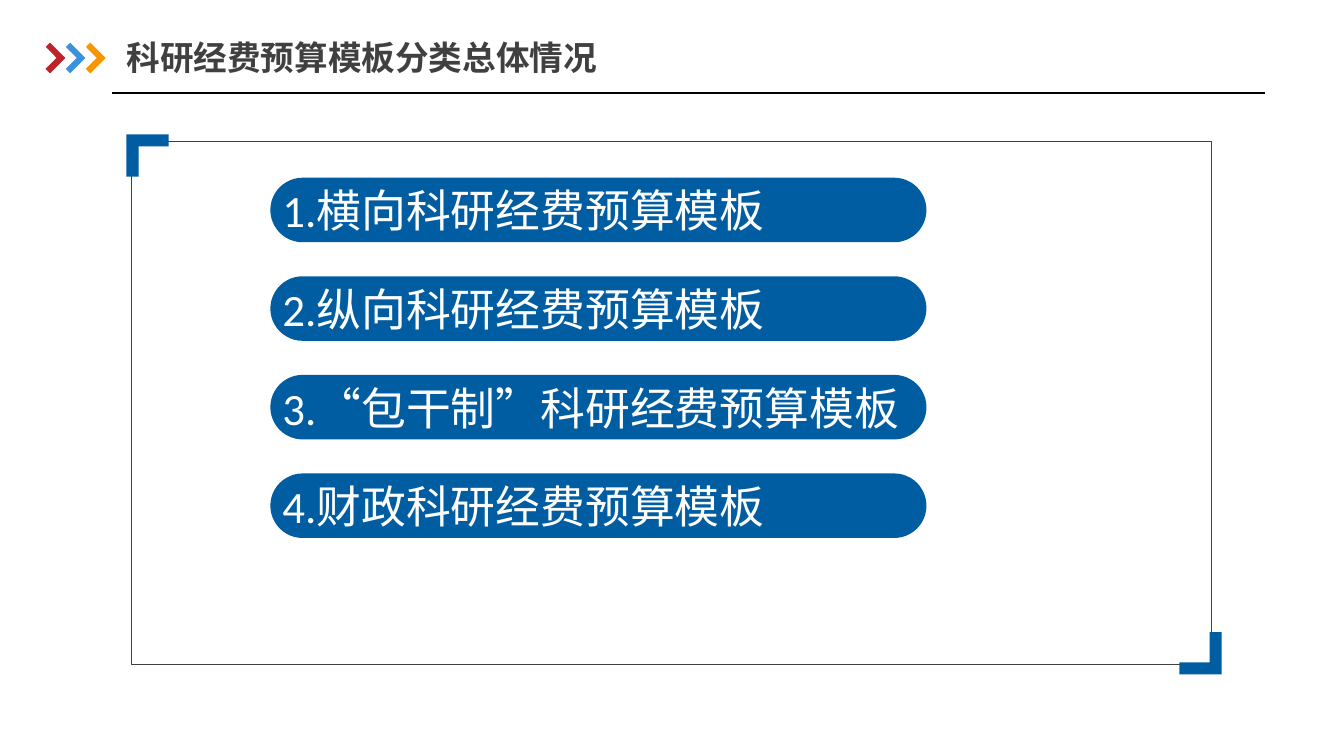
from lxml.etree import SubElement
from pptx import Presentation
from pptx.dml.color import RGBColor
from pptx.enum.shapes import MSO_CONNECTOR, MSO_SHAPE as SHAPE
from pptx.enum.text import MSO_ANCHOR as ANCHOR, PP_ALIGN as ALIGN
from pptx.oxml.ns import qn
from pptx.util import Cm, Pt

COLORS = {
    "blue": "005DA2", "sky": "3992DB", "orange": "F79600", "red": "BC242A",
    "gray": "404040", "black": "000000", "white": "FDFDFD",
}
CJK_FONT = "Noto Sans CJK SC"
ITEMS = [
    "1.横向科研经费预算模板",
    "2.纵向科研经费预算模板",
    "3.“包干制”科研经费预算模板",
    "4.财政科研经费预算模板",
]


def rgb(name):
    return RGBColor.from_string(COLORS[name])


def style(sp, fill=None, line=None, width=0.25):
    sp.shadow.inherit = False
    if fill:
        sp.fill.solid()
        sp.fill.fore_color.rgb = rgb(fill)
    else:
        sp.fill.background()
    if line:
        sp.line.color.rgb = rgb(line)
        sp.line.width = Pt(width)
    else:
        sp.line.fill.background()


def set_text(sp, text, *, size, color, font=CJK_FONT, bold=False,
             inset=(0, 0)):
    tf = sp.text_frame
    tf.word_wrap = True
    tf.vertical_anchor = ANCHOR.MIDDLE
    tf.margin_left = tf.margin_right = Cm(inset[0])
    tf.margin_top = tf.margin_bottom = Cm(inset[1])
    p = tf.paragraphs[0]
    p.alignment = ALIGN.LEFT
    r = p.add_run()
    r.text = text
    r.font.size, r.font.bold, r.font.name = Pt(size), bold, font
    r.font.color.rgb = rgb(color)
    # Chinese characters use their own typeface
    rPr = r.font._element
    rPr.set("lang", "zh-CN")
    ea = rPr.makeelement(qn("a:ea"), {"typeface": CJK_FONT})
    rPr.find(qn("a:latin")).addnext(ea)


def add_header(s, x, y, w, h):
    # Three chevrons, made from turned corner shapes
    for i, color in enumerate(("red", "sky", "orange")):
        sp = s.shapes.add_shape(SHAPE.CORNER, Cm(x + 0.38 * i), Cm(y + 0.33),
                                Cm(0.41), Cm(0.41))
        sp.adjustments[0], sp.adjustments[1] = 0.28, 0.29
        sp.rotation = 225
        style(sp, color)
    # Title
    tb = s.shapes.add_textbox(Cm(x + 1.65), Cm(y), Cm(13.11), Cm(1.04))
    set_text(tb, "科研经费预算模板分类总体情况", size=18, color="gray",
             bold=True, inset=(0, 0.13))
    # Rule under the title
    ln = s.shapes.add_connector(MSO_CONNECTOR.STRAIGHT, Cm(x + 1.37), Cm(y + h),
                                Cm(x + w), Cm(y + h))
    ln.line.color.rgb = rgb("black")
    ln.line.width = Pt(0.75)
    SubElement(ln._element.spPr, qn("a:effectLst"))


def add_bracket(s, x, y, direction):
    """Corner mark at x, y whose arms run right and down (1) or left and up (-1)."""
    arm, thick = 0.8, 0.23
    outline = [(0, 0), (arm, 0), (arm, thick), (thick, thick), (thick, arm), (0, arm)]
    points = [(Cm(x + direction * dx), Cm(y + direction * dy)) for dx, dy in outline]
    fb = s.shapes.build_freeform(*points[0])
    fb.add_line_segments(points[1:], close=True)
    style(fb.convert_to_shape(), "blue")


def add_frame(s, x, y, w, h):
    sp = s.shapes.add_shape(SHAPE.ROUNDED_RECTANGLE, Cm(x), Cm(y), Cm(w), Cm(h))
    sp.adjustments[0] = 0
    style(sp, line="gray")
    add_bracket(s, x - 0.1, y - 0.13, 1)
    add_bracket(s, x + w + 0.2, y + h + 0.2, -1)


def add_items(s, x, y, w, h):
    pill_h = 1.22
    step = (h - pill_h) / (len(ITEMS) - 1)
    for i, text in enumerate(ITEMS):
        sp = s.shapes.add_shape(SHAPE.ROUNDED_RECTANGLE, Cm(x), Cm(y + i * step),
                                Cm(w), Cm(pill_h))
        sp.adjustments[0] = 0.5
        style(sp, "blue")
        set_text(sp, text, size=24, color="white", font="Calibri",
                 inset=(0.05, 0.05))


def main():
    prs = Presentation()
    prs.slide_width, prs.slide_height = Cm(25.4), Cm(14.29)
    s = prs.slides.add_slide(prs.slide_layouts[6])
    add_header(s, 0.74, 0.56, 23.16, 1.2)
    add_frame(s, 2.49, 2.67, 20.4, 9.88)
    add_items(s, 5.11, 3.36, 12.4, 6.81)
    prs.save("out.pptx")


if __name__ == "__main__":
    main()
